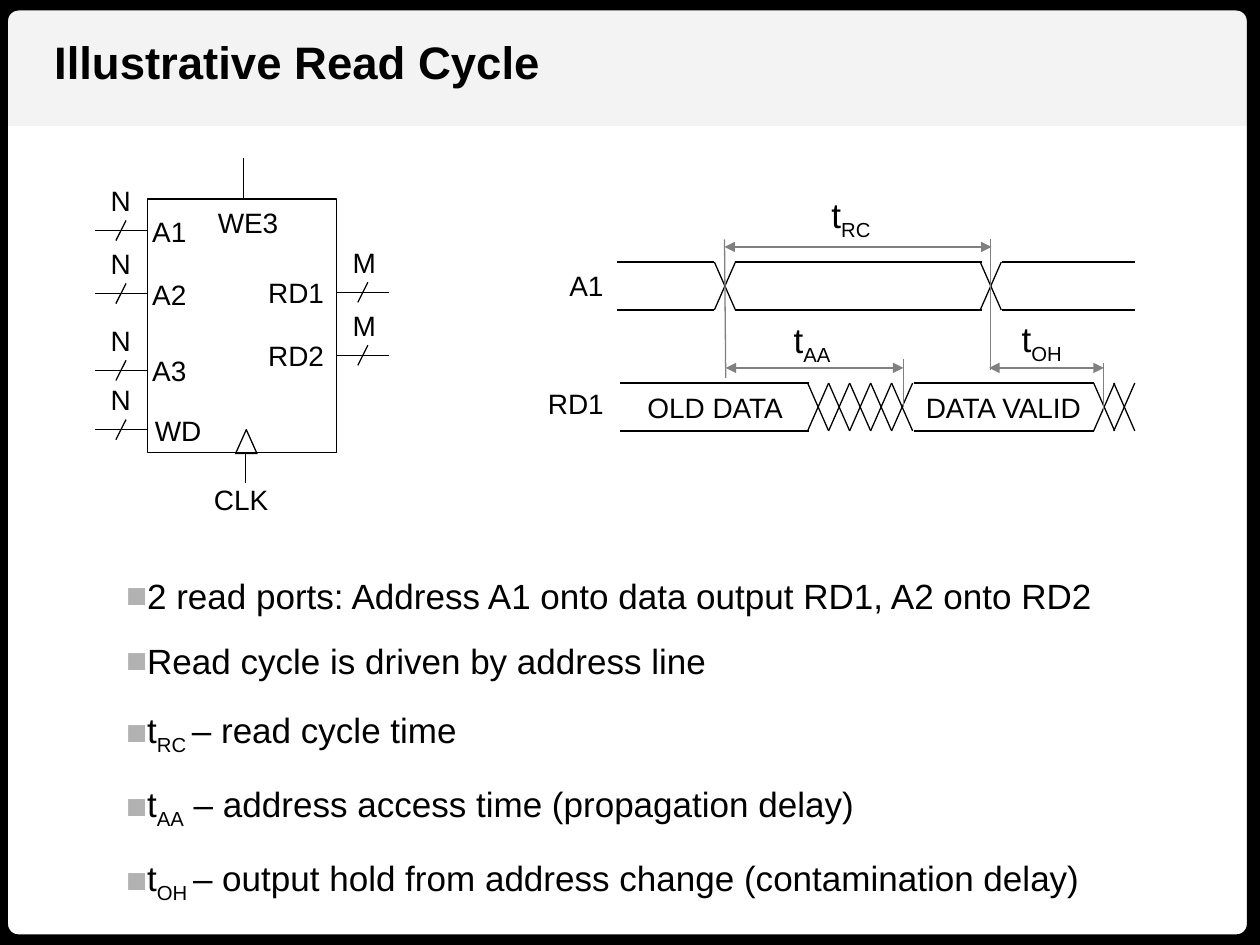
import pptx
import pptx.util
import pptx.dml.color
import pptx.enum.shapes
import pptx.enum.text
import pptx.oxml
import pptx.oxml.ns
from dataclasses import dataclass
from lxml import etree

Inches, Pt = pptx.util.Inches, pptx.util.Pt
RGB = pptx.dml.color.RGBColor.from_string
Shape = pptx.enum.shapes.MSO_SHAPE
qn = pptx.oxml.ns.qn


@dataclass
class Theme:
    font: str = "Arial"
    ink: str = "000000"
    gray: str = "808080"
    band: str = "F3F3F3"
    mark: str = "B2B2B2"
    title: int = 26
    body: int = 20
    label: int = 16
    thin: float = 0.75
    edge: int = 12


theme = Theme()
deck = pptx.Presentation()
deck.slide_width, deck.slide_height = Inches(10), Inches(7.5)
slide = deck.slides.add_slide(deck.slide_layouts[1])
shapes = slide.shapes


def link(x1, y1, x2, y2, color=theme.ink, heads=False):
    line = shapes.add_connector(pptx.enum.shapes.MSO_CONNECTOR.STRAIGHT,
                                Inches(x1), Inches(y1), Inches(x2), Inches(y2))
    line.line.color.rgb = RGB(color)
    line.line.width = Pt(theme.thin)
    props = line._element.spPr
    if heads:
        for end in ("a:headEnd", "a:tailEnd"):
            etree.SubElement(props.find(qn("a:ln")), qn(end), type="triangle")
    etree.SubElement(props, qn("a:effectLst"))


def write(para, parts, size, bold=False):
    """Set the paragraph's runs; the second one is a subscript."""
    for i, part in enumerate(parts):
        run = para.add_run()
        run.text = part
        if i == 1:
            run.font._element.set("baseline", "-25000")
    font = para.font
    font.name, font.size, font.bold = theme.font, Pt(size), bold
    font.color.rgb = RGB(theme.ink)
    para.alignment = pptx.enum.text.PP_ALIGN.LEFT


# Header band, slide frame, register file and clock mark
for kind, x, y, w, h, fill, width in [
        (Shape.RECTANGLE, 0, 0, 10, 1, theme.band, 0),
        (Shape.ROUNDED_RECTANGLE, -0.02, 0, 10, 7.5, None, theme.edge),
        (Shape.RECTANGLE, 1.17, 1.58, 1.5, 2.01, None, theme.thin),
        (Shape.ISOSCELES_TRIANGLE, 1.87, 3.41, 0.17, 0.19, None, theme.thin)]:
    box = shapes.add_shape(kind, Inches(x), Inches(y), Inches(w), Inches(h))
    box.shadow.inherit = False
    if fill:
        box.fill.solid()
        box.fill.fore_color.rgb = RGB(fill)
        box.line.fill.background()
        shapes._spTree.insert(2, box._element)  # behind the title
    else:
        box.fill.background()
        box.line.color.rgb = RGB(theme.ink)
        box.line.width = Pt(width)
    if kind == Shape.ROUNDED_RECTANGLE:
        box.adjustments[0] = 0.022

# Title
title = shapes.title
title.left, title.top, title.width, title.height = map(Inches, (0.33, 0.22, 4.1, 0.54))
frame = title.text_frame
frame.word_wrap = False
frame.auto_size = pptx.enum.text.MSO_AUTO_SIZE.NONE
frame.vertical_anchor = pptx.enum.text.MSO_ANCHOR.TOP
write(frame.paragraphs[0], ["Illustrative Read Cycle"], theme.title, True)

# Bullet list
body = slide.placeholders[1]
body.left, body.top, body.width, body.height = map(Inches, (0.28, 4.33, 9.39, 3.1))
frame = body.text_frame
frame.auto_size = pptx.enum.text.MSO_AUTO_SIZE.NONE
frame.margin_left, frame.margin_top = Inches(0.34), Inches(0.06)
notes = [["2 read ports: Address A1 onto data output RD1, A2 onto RD2"],
         ["Read cycle is driven by address line"],
         ["t", "RC ", "– read cycle time"],
         ["t", "AA", " – address access time (propagation delay)"],
         ["t", "OH ", "– output hold from address change (contamination delay)"]]
for i, parts in enumerate(notes):
    para = frame.add_paragraph() if i else frame.paragraphs[0]
    props = para._p.get_or_add_pPr()
    props.set("marL", "0")
    props.set("indent", str(Inches(0.38)))
    tint = etree.SubElement(props, qn("a:buClr"))
    etree.SubElement(tint, qn("a:srgbClr"), val=theme.mark)
    etree.SubElement(props, qn("a:buFont"), typeface=theme.font)
    etree.SubElement(props, qn("a:buChar"), char="■")
    para.line_spacing = 1.5
    para.space_before = Pt(1.5)
    write(para, parts, theme.body)

# Labels: parts, left, top, width, height, size
labels = [(parts, x, y, w, 0.37, theme.label) for parts, x, y, w in [
    (["WE3"], 1.63, 1.58, 0.69), (["CLK"], 1.6, 3.78, 0.64),
    (["A1"], 4.42, 2.08, 0.48), (["RD1"], 4.25, 3.02, 0.65),
    (["OLD DATA"], 5.04, 3.05, 1.29), (["DATA VALID"], 7.25, 3.05, 1.64)]]
labels += [(["t", sub], x, y, w, 0.44, theme.body) for sub, x, y, w in [
    ("RC", 6.5, 1.49, 0.55), ("AA", 6.2, 2.48, 0.53), ("OH", 8.01, 2.47, 0.56)]]

# Ports: name, name left, name width, wire left, wire height, bus size
ports = [("A1", 1.11, 0.48, 0.75, 1.83, "N"), ("A2", 1.11, 0.48, 0.75, 2.33, "N"),
         ("A3", 1.11, 0.48, 0.75, 2.94, "N"), ("WD", 1.13, 0.58, 0.75, 3.41, "N"),
         ("RD1", 2.03, 0.65, 2.67, 2.32, "M"), ("RD2", 2.03, 0.65, 2.67, 2.82, "M")]
for name, left, wide, x, y, bus in ports:
    link(x, y, x + 0.42, y)
    link(x + 0.17, y + 0.08, x + 0.25, y - 0.08)
    labels += [([name], left, y - 0.18, wide, 0.37, theme.label),
               ([bus], x + 0.03, y - 0.42, 0.37, 0.37, theme.label)]
link(1.93, 1.58, 1.93, 1.25)
link(1.95, 3.59, 1.95, 3.83)

for parts, x, y, w, h, size in labels:
    box = shapes.add_textbox(Inches(x), Inches(y), Inches(w), Inches(h))
    box.text_frame.word_wrap = False
    write(box.text_frame.paragraphs[0], parts, size)

# Signals: top, steady spans, left edges of the crossings
high, step = 0.38, 1 / 6
signals = [(2.08, [(4.9, 5.67), (5.83, 7.79), (7.95, 9.01)], [5.67, 7.78]),
           (3.04, [(4.92, 6.42), (7.25, 8.68)],
            [6.41 + step * i for i in range(5)] + [8.68, 8.84])]
for top, spans, turns in signals:
    for start, stop in spans:
        link(start, top, stop, top)
        link(start, top + high, stop, top + high)
    for x in turns:
        link(x, top, x + step, top + high)
        link(x, top + high, x + step, top)

# Time marks and spans
for x1, y1, x2, y2 in [(5.76, 3, 5.75, 1.9), (7.17, 3.23, 7.17, 2.85),
                       (7.86, 2.94, 7.86, 1.9), (8.76, 3.25, 8.76, 2.88)]:
    link(x1, y1, x2, y2, theme.gray)
for start, stop, y in [(5.75, 7.87, 1.96), (5.76, 7.17, 2.92), (7.85, 8.76, 2.92)]:
    link(start, y, stop, y, theme.gray, True)

deck.save("out.pptx")
